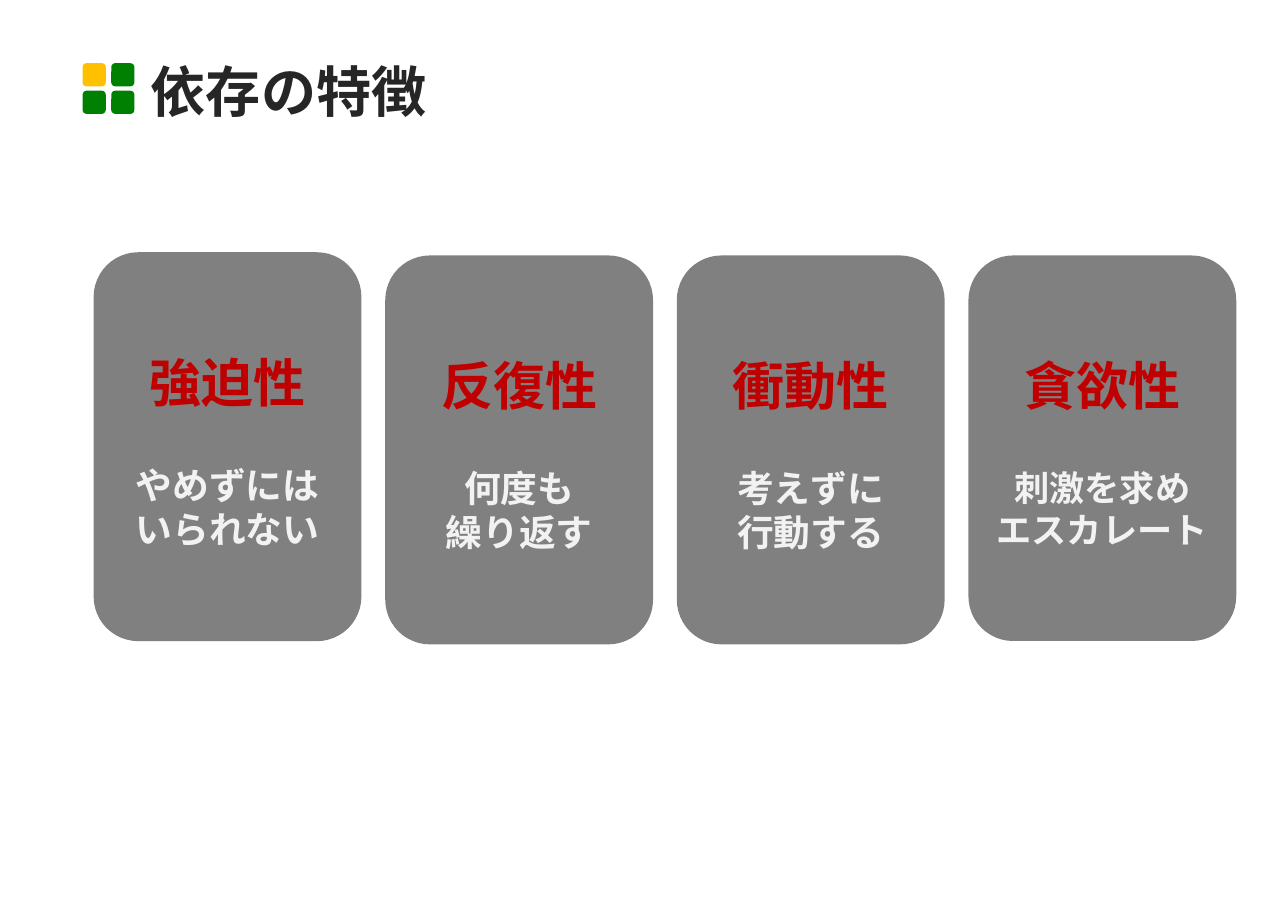
from dataclasses import dataclass

from lxml.etree import SubElement
from pptx import Presentation
from pptx.dml.color import RGBColor
from pptx.enum.shapes import MSO_SHAPE
from pptx.enum.text import MSO_ANCHOR, MSO_AUTO_SIZE, PP_ALIGN
from pptx.oxml.ns import qn
from pptx.util import Pt

SANS = "Noto Sans CJK JP"
GREEN, YELLOW, GRAY = "008000", "FFC000", "808080"
RED, DARK, PALE = "C00000", "262626", "F2F2F2"


@dataclass
class Card:
    heading: str
    lines: tuple[str, str]
    top: float = 167
    height: float = 254.2
    size: float = 24


CARDS = [
    Card("強迫性", ("やめずには", "いられない"), top=164.9),
    Card("反復性", ("何度も", "繰り返す")),
    Card("衝動性", ("考えずに", "行動する")),
    Card("貪欲性", ("刺激を求め", "エスカレート"), height=252, size=23),
]
CARD_LEFT, CARD_STEP, CARD_WIDTH = 61.2, 190.56, 175
TILE_LEFT, TILE_TOP, TILE_SIZE = 54, 41.3, 15.1
TILE_STEP_X, TILE_STEP_Y = 18.7, 18


def color(value: str) -> RGBColor:
    return RGBColor.from_string(value)


def add_text(p, text: str, *, size: float, fill: str, latin: str = SANS,
             align=PP_ALIGN.CENTER, line: float | None = None, after: float = 0) -> None:
    """Write one bold run into a paragraph; line and after are in points."""
    p.alignment = align
    p.space_after = Pt(after)
    if line:
        p.line_spacing = Pt(line)
    r = p.add_run()
    r.text = text
    r.font.size, r.font.bold = Pt(size), True
    r.font.color.rgb = color(fill)
    r.font.name = latin
    SubElement(r._r.get_or_add_rPr(), qn("a:ea"), typeface=SANS)


def add_box(shapes, kind, left: float, top: float, width: float, height: float, fill: str):
    sp = shapes.add_shape(kind, Pt(left), Pt(top), Pt(width), Pt(height))
    sp.shadow.inherit = False
    sp.fill.solid()
    sp.fill.fore_color.rgb = color(fill)
    sp.line.fill.background()
    return sp


def add_icon(slide) -> None:
    group = slide.shapes.add_group_shape()
    for row in range(2):
        for col in range(2):
            add_box(group.shapes, MSO_SHAPE.ROUNDED_RECTANGLE,
                    TILE_LEFT + col * TILE_STEP_X, TILE_TOP + row * TILE_STEP_Y,
                    TILE_SIZE, TILE_SIZE, GREEN if row or col else YELLOW)


def add_title(slide, text: str) -> None:
    sp = slide.shapes.title
    sp.left, sp.top, sp.width, sp.height = Pt(91.4), Pt(34.6), Pt(714.2), Pt(49)
    tf = sp.text_frame
    tf.auto_size = MSO_AUTO_SIZE.NONE
    tf.vertical_anchor = MSO_ANCHOR.MIDDLE
    add_text(tf.paragraphs[0], text, size=36, fill=DARK, align=PP_ALIGN.LEFT)


def add_card(slide, card: Card, left: float) -> None:
    sp = add_box(slide.shapes, MSO_SHAPE.FLOWCHART_ALTERNATE_PROCESS,
                 left, card.top, CARD_WIDTH, card.height, GRAY)
    tf = sp.text_frame
    tf.word_wrap = True
    tf.vertical_anchor = MSO_ANCHOR.MIDDLE
    tf.margin_left = tf.margin_right = 0
    add_text(tf.paragraphs[0], card.heading, size=34, fill=RED, latin="Arial",
             line=46, after=32.5)
    for text in card.lines:
        add_text(tf.add_paragraph(), text, size=card.size, fill=PALE, line=card.size * 1.2)


def main() -> None:
    prs = Presentation()
    prs.slide_width, prs.slide_height = Pt(841.68), Pt(595.44)
    slide = prs.slides.add_slide(prs.slide_layouts[5])

    # Heading with its four-tile icon
    add_icon(slide)
    add_title(slide, "依存の特徴")

    # Row of feature cards
    for i, card in enumerate(CARDS):
        add_card(slide, card, CARD_LEFT + i * CARD_STEP)

    prs.save("out.pptx")


if __name__ == "__main__":
    main()
